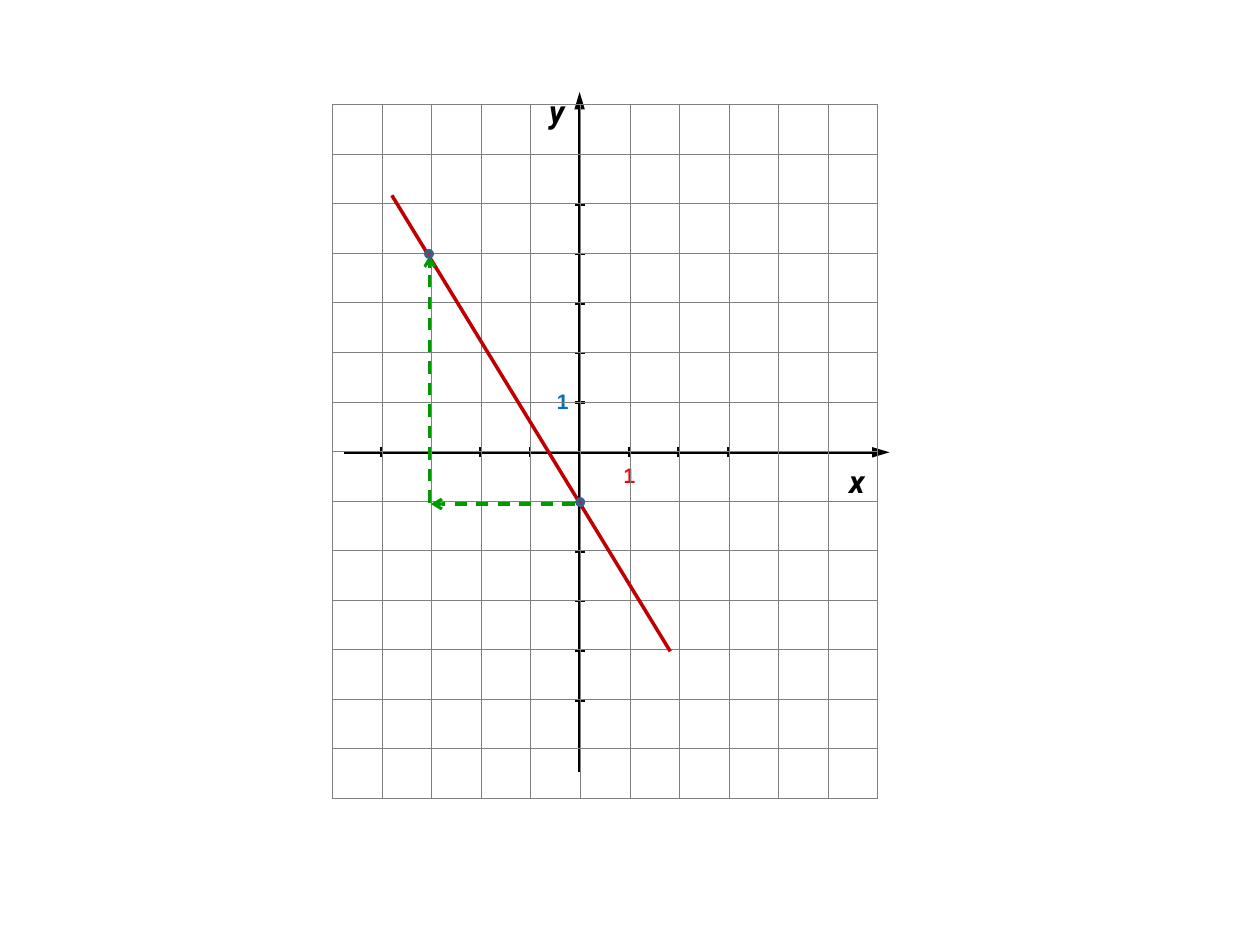
from pptx import Presentation
from pptx.util import Inches, Pt
from pptx.dml.color import RGBColor as RGB
from pptx.enum.dml import MSO_LINE as Dash
from pptx.enum.shapes import MSO_CONNECTOR as Conn, MSO_SHAPE as Shape
from pptx.enum.text import MSO_AUTO_SIZE as Fit
from pptx.oxml import parse_xml
from pptx.oxml.ns import nsdecls
from lxml.etree import SubElement as sub

THEME = {
    "ink": "000000", "grid": "808080", "graph": "C00000", "step": "009900",
    "dot": "FF0000", "rim": "3A5F8C", "xunit": "FF0000", "yunit": "0070C0",
    "axis": 1.5, "curve": 2, "dash": 1.75, "hair": 0.5, "name": 18, "unit": 12,
}
COLS, ROWS = 11, 14
WIDE, HIGH = 4.33, 5.51
UNIT = WIDE / COLS
OX, OY = 4.6, 3.59  # origin of the axes

prs = Presentation()
prs.slide_width, prs.slide_height = Inches(10), Inches(7.5)
slide = prs.slides.add_slide(prs.slide_layouts[6])
shapes = slide.shapes


def rule(x1, y1, x2, y2, color, width, head=None, size="med", dash=None):
    line = shapes.add_connector(Conn.STRAIGHT, *map(Inches, (x1, y1, x2, y2)))
    line.line.color.rgb = RGB.from_string(THEME[color])
    line.line.width = Pt(THEME[width])
    if dash:
        line.line.dash_style = dash
    props = line._element.spPr
    if head:
        tail = parse_xml(f'<a:tailEnd {nsdecls("a")} type="{head}" w="med" len="{size}"/>')
        line.line._get_or_add_ln().append(tail)
    props.append(parse_xml(f'<a:effectLst {nsdecls("a")}/>'))


# Axes
rule(OX, 6.13, OX, 0.73, "ink", "axis", "triangle", "lg")
rule(2.73, OY, 7.06, OY, "ink", "axis", "triangle", "lg")

# Ticks
for n in range(-5, 6):
    y = OY + n * UNIT
    rule(OX - 0.04, y, OX + 0.04, y, "ink", "axis")
for n in range(-4, 4):
    x = OX + n * UNIT
    rule(x, OY - 0.04, x, OY + 0.04, "ink", "axis")

# Unit marks and axis names
labels = [
    ("1", (4.95, 3.67, 0.09, 0.2), "xunit", "unit", "Arial", False),
    ("1", (4.42, 3.08, 0.09, 0.2), "yunit", "unit", "Arial", False),
    ("x", (6.64, 3.62, 0.5, 0.4), "ink", "name", "Roboto", True),
    ("y", (4.26, 0.68, 0.5, 0.4), "ink", "name", "Roboto", True),
]
for text, place, color, size, face, named in labels:
    frame = shapes.add_textbox(*map(Inches, place)).text_frame
    frame.word_wrap = named
    frame.auto_size = Fit.SHAPE_TO_FIT_TEXT
    if not named:
        for side in ("left", "right", "top", "bottom"):
            setattr(frame, f"margin_{side}", 0)
    run = frame.paragraphs[0].add_run()
    run.text = text
    look = {"name": face, "size": Pt(THEME[size]), "bold": True, "italic": named}
    for key, value in look.items():
        setattr(run.font, key, value)
    run.font.color.rgb = RGB.from_string(THEME[color])

# Square grid
grid = shapes.add_table(ROWS, COLS, *map(Inches, (2.64, 0.83, WIDE, HIGH))).table
grid.first_row = grid.horz_banding = False
for col in grid.columns:
    col.width = Inches(UNIT)
for row in grid.rows:
    row.height = Inches(HIGH / ROWS)
for cell in grid.iter_cells():
    cell.margin_top = cell.margin_bottom = 0
    cell.text_frame.paragraphs[0].font.size = Pt(THEME["unit"])
    props = cell._tc.get_or_add_tcPr()
    for side in ("lnL", "lnR", "lnT", "lnB"):
        props.append(parse_xml(
            f'<a:{side} {nsdecls("a")} w="{Pt(THEME["hair"])}"><a:solidFill>'
            f'<a:srgbClr val="{THEME["grid"]}"/></a:solidFill></a:{side}>'))
    cell.fill.background()

# Graph and the two steps between its points
rule(4.56, 4, 3.42, 4, "step", "dash", "arrow", dash=Dash.DASH)
rule(3.11, 1.55, 5.32, 5.17, "graph", "curve")
rule(3.41, 3.99, 3.41, 2.03, "step", "dash", "arrow", dash=Dash.DASH)

# Points
for x, y in ((4.58, 3.96), (3.38, 1.99)):
    dot = shapes.add_shape(Shape.OVAL, *map(Inches, (x, y, 0.05, 0.05)))
    dot.shadow.inherit = False
    dot.fill.solid()
    dot.fill.fore_color.rgb = RGB.from_string(THEME["dot"])
    dot.line.color.rgb = RGB.from_string(THEME["rim"])
    dot.line.width = Pt(THEME["curve"])

prs.save("out.pptx")
